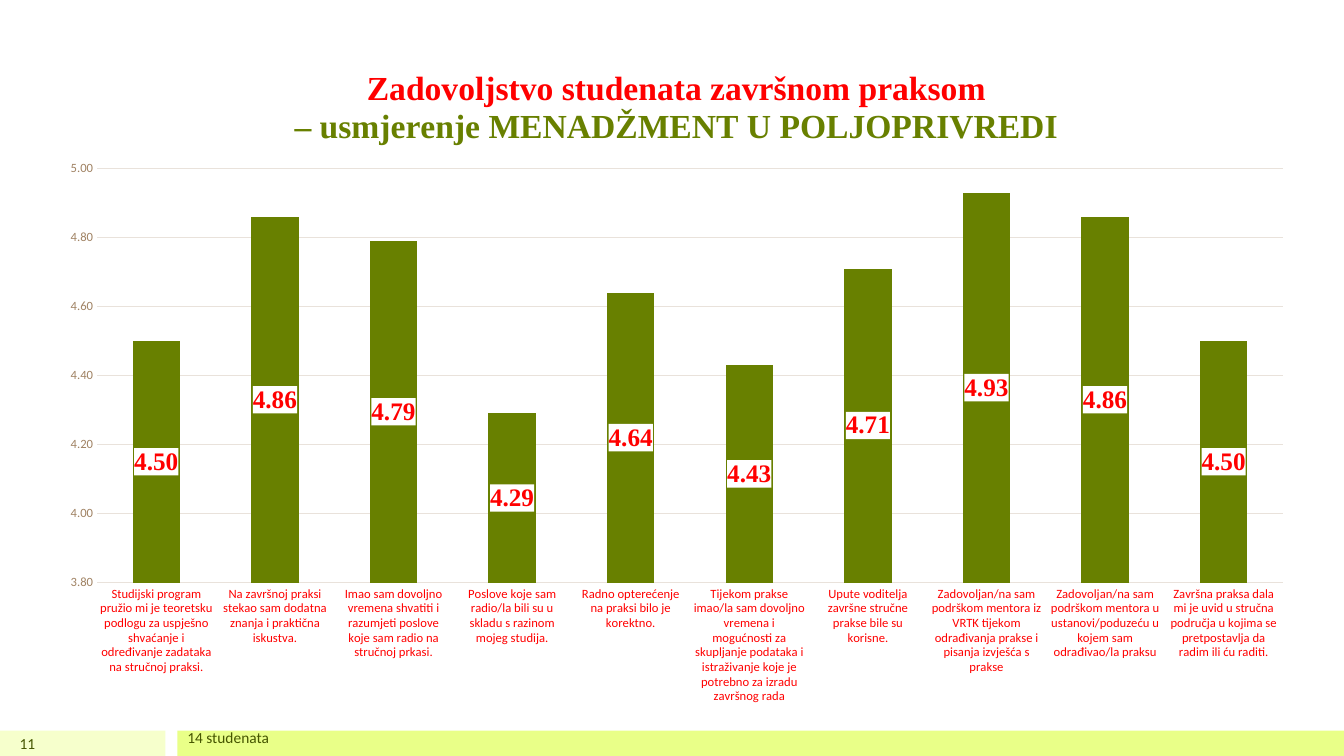
from pptx import Presentation
from pptx import util as u
from pptx.chart.data import CategoryChartData
from pptx.dml.color import RGBColor
from pptx.enum import chart as ch, shapes, text
from pptx.oxml import parse_xml
from pptx.oxml.ns import nsdecls, qn

RED = RGBColor(0xFF, 0x00, 0x00)
OLIVE = RGBColor(0x68, 0x80, 0x00)
DARK_OLIVE = RGBColor(0x45, 0x55, 0x00)
PALE_LIME = RGBColor(0xF6, 0xFF, 0xCC)
LIME = RGBColor(0xE9, 0xFF, 0x88)
BROWN = RGBColor(0x4D, 0x3E, 0x2F)
TAN = RGBColor(0xA0, 0x82, 0x63)
GRID = RGBColor(0xE9, 0xE2, 0xDB)

TITLE = [
    ("Zadovoljstvo studenata završnom praksom", RED),
    ("– usmjerenje MENADŽMENT U POLJOPRIVREDI", OLIVE),
]
RATINGS = [
    ("Studijski program pružio mi je teoretsku podlogu za uspješno shvaćanje "
     "i određivanje zadataka na stručnoj praksi.", 4.50),
    ("Na završnoj praksi stekao sam dodatna znanja i praktična iskustva.", 4.86),
    ("Imao sam dovoljno vremena shvatiti i razumjeti poslove koje sam radio "
     "na stručnoj prkasi.", 4.79),
    ("Poslove koje sam radio/la bili su u skladu s razinom mojeg studija.", 4.29),
    ("Radno opterećenje na praksi bilo je korektno.", 4.64),
    ("Tijekom prakse imao/la sam dovoljno vremena i mogućnosti za skupljanje "
     "podataka i istraživanje koje je potrebno za izradu završnog rada", 4.43),
    ("Upute voditelja završne stručne prakse bile su korisne.", 4.71),
    ("Zadovoljan/na sam podrškom mentora iz VRTK tijekom odrađivanja prakse "
     "i pisanja izvješća s prakse", 4.93),
    ("Zadovoljan/na sam podrškom mentora u ustanovi/poduzeću u kojem sam "
     "odrađivao/la praksu", 4.86),
    ("Završna praksa dala mi je uvid u stručna područja u kojima se "
     "pretpostavlja da radim ili ću raditi.", 4.50),
]


def style_font(font, size, color, name="Calibri", bold=False):
    font.size, font.name, font.bold = u.Pt(size), name, bold
    font.color.rgb = color


def layout_xml(**parts):
    """Manual chart layout, in fractions of the chart area."""
    target = '<c:layoutTarget val="inner"/>' if "w" in parts else ""
    modes = "".join(f'<c:{k}Mode val="edge"/>' for k in "xy")
    values = "".join(f'<c:{k} val="{v}"/>' for k, v in parts.items())
    return parse_xml(f'<c:layout {nsdecls("c")}><c:manualLayout>{target}{modes}'
                     f'{values}</c:manualLayout></c:layout>')


def set_layout(parent, index, **parts):
    old = parent.find(qn("c:layout"))
    if old is not None:
        parent.remove(old)
    parent.insert(index, layout_xml(**parts))


class SlideBuilder:
    def __init__(self, slide):
        self.s = slide

    def bar(self, x, y, w, h, color):
        sp = self.s.shapes.add_shape(shapes.MSO_SHAPE.RECTANGLE,
                                     u.Cm(x), u.Cm(y), u.Cm(w), u.Cm(h))
        sp.shadow.inherit = False
        sp.fill.solid()
        sp.fill.fore_color.rgb = color
        sp.line.fill.background()

    def label(self, x, y, w, h, words, align):
        sp = self.s.shapes.add_textbox(u.Cm(x), u.Cm(y), u.Cm(w), u.Cm(h))
        tf = sp.text_frame
        tf.word_wrap = True
        tf.vertical_anchor = text.MSO_ANCHOR.MIDDLE
        tf.margin_top = tf.margin_bottom = 0
        tf.text = words
        p = tf.paragraphs[0]
        p.alignment = align
        style_font(p.runs[0].font, 11, DARK_OLIVE)

    def column_chart(self, x, y, w, h, ratings):
        data = CategoryChartData(number_format="0.00")
        data.categories = [question for question, _ in ratings]
        data.add_series("Series 1", [score for _, score in ratings])
        chart = self.s.shapes.add_chart(
            ch.XL_CHART_TYPE.COLUMN_STACKED,
            u.Cm(x), u.Cm(y), u.Cm(w), u.Cm(h), data).chart
        style_font(chart.font, 10, BROWN)
        chart.has_legend = False
        plot_area = chart.element.find(".//" + qn("c:plotArea"))
        set_layout(plot_area, 0, x=0.041, y=0.186, w=0.939, h=0.614)
        self.style_columns(chart)
        self.style_axes(chart)
        return chart

    def style_columns(self, chart):
        plot = chart.plots[0]
        plot.gap_width, plot.overlap = 150, 100
        plot.vary_by_categories = False
        series = plot.series[0]
        series.format.fill.solid()
        series.format.fill.fore_color.rgb = OLIVE
        labels = series.data_labels
        labels.show_value = True
        labels.number_format = "0.00"
        labels.number_format_is_linked = False
        labels.position = ch.XL_LABEL_POSITION.CENTER
        style_font(labels.font, 18, RED, "Times New Roman", True)
        # White box behind each value
        num_fmt = chart.element.find(f'.//{qn("c:dLbls")}/{qn("c:numFmt")}')
        num_fmt.addnext(parse_xml(
            f'<c:spPr {nsdecls("c", "a")}><a:solidFill>'
            '<a:srgbClr val="FFFFFF"/></a:solidFill></c:spPr>'))

    def style_axes(self, chart):
        for axis, color in ((chart.category_axis, RED), (chart.value_axis, TAN)):
            axis.major_tick_mark = axis.minor_tick_mark = ch.XL_TICK_MARK.NONE
            axis.format.line.fill.background()
            style_font(axis.tick_labels.font, 9, color)
        axis = chart.value_axis
        axis.minimum_scale, axis.maximum_scale, axis.major_unit = 3.8, 5, 0.2
        axis.tick_labels.number_format = "0.00"
        axis.tick_labels.number_format_is_linked = False
        axis.major_gridlines.format.line.color.rgb = GRID
        axis.major_gridlines.format.line.width = u.Pt(0.75)

    def chart_title(self, chart, lines):
        chart.has_title = True
        title = chart.chart_title
        title.include_in_layout = False
        tf = title.text_frame
        tf.text = "\n".join(words for words, _ in lines)
        for p, (_, color) in zip(tf.paragraphs, lines):
            p.alignment = text.PP_ALIGN.CENTER
            style_font(p.runs[0].font, 24, color, "Times New Roman", True)
        set_layout(title.element, 1, x=0.195, y=0.033)


def main():
    prs = Presentation()
    prs.slide_width, prs.slide_height = u.Cm(33.87), u.Cm(19.05)
    b = SlideBuilder(prs.slides.add_slide(prs.slide_layouts[6]))

    # Footer bands, slide number and sample size
    b.bar(0, 18.41, 4.17, 0.64, PALE_LIME)
    b.bar(4.47, 18.41, 29.4, 0.64, LIME)
    b.label(0, 18.41, 1.14, 0.64, "11", text.PP_ALIGN.RIGHT)
    b.label(4.47, 18.41, 25.4, 0.36, "14 studenata", text.PP_ALIGN.LEFT)

    # Satisfaction chart
    chart = b.column_chart(1.14, 1.09, 31.83, 16.99, RATINGS)
    b.chart_title(chart, TITLE)

    prs.save("out.pptx")


if __name__ == "__main__":
    main()
